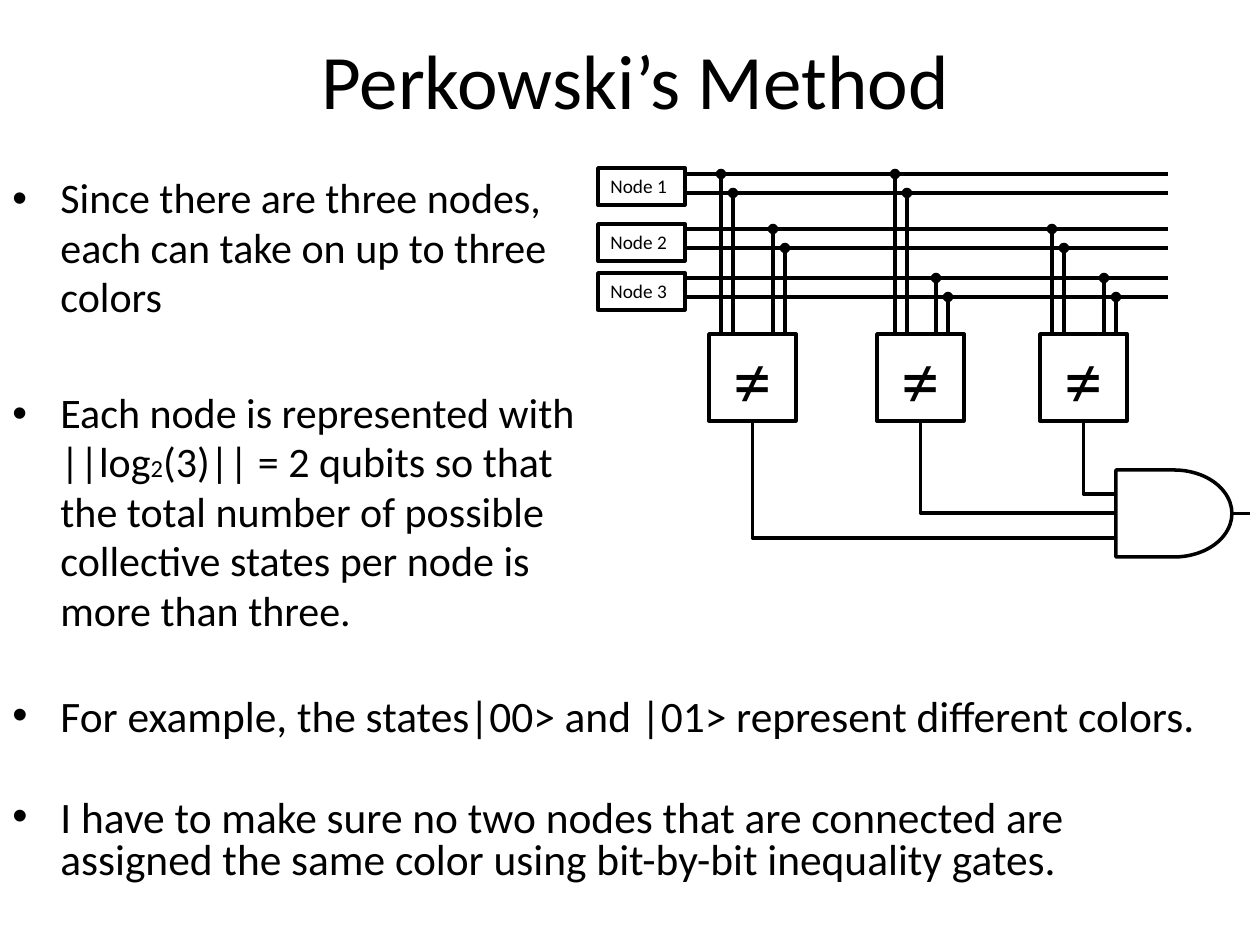
"""Build the slide on Perkowski's graph colouring method with its inequality circuit."""
from lxml.etree import SubElement
from pptx import Presentation
from pptx.dml.color import RGBColor
from pptx.enum.shapes import MSO_CONNECTOR, MSO_SHAPE
from pptx.enum.text import MSO_ANCHOR, PP_ALIGN
from pptx.oxml.ns import qn
from pptx.util import Pt

SCALE = 914400 / 126
COLORS = {"ink": "000000", "paper": "FFFFFF"}
FONT = "Calibri"
LINE_WIDTH = 2
GATE_TOP, GATE_SIZE = 334, 87
GATE_LEFTS = (709, 877, 1040)
NODE_LEFT, NODE_WIDTH, NODE_HEIGHT = 598, 87, 37
NODE_TOPS = (168, 224, 273)
QUBIT_WIRES = ((174, 193), (229, 248), (278, 297))
WIRE_START, WIRE_END = 668, 1168
TAPS = (
    (0, 721), (1, 773),
    (0, 895), (2, 936),
    (1, 1052), (2, 1104),
)
TAP_GAP = 12
AND_BOX = (1116, 470, 116, 87)
AND_INPUTS = (538, 513, 494)
OUTPUT_END = 1250
INDENT = 48
STATE_BULLETS = (
    [("Since there are three nodes, each can take on up to three colors", 24)],
    [
        ("Each node is represented with ||log", 24),
        ("2", 14),
        ("(3)|| = 2 qubits so that the total number of possible collective "
         "states per node is more than three.", 24),
    ],
)
COLOR_BULLETS = (
    [("For example, the states|00> and |01> represent different colors.", 24.8)],
    [("I have to make sure no two nodes that are connected are assigned "
      "the same color using bit-by-bit inequality gates.", 24.8)],
)


def px(length):
    """Turn px into EMU."""
    return round(length * SCALE)


def color(name):
    """Look up a named colour."""
    return RGBColor.from_string(COLORS[name])


def apply(target, **formats):
    """Set each format value on the target."""
    for attribute, value in formats.items():
        setattr(target, attribute, value)


def write(paragraph, words, size):
    """Add a run in the slide's font."""
    run = paragraph.add_run()
    run.text = words
    apply(run.font, name=FONT, size=Pt(size))
    run.font.color.rgb = color("ink")


def place(shape, left, top, width, height):
    """Set position and size in px."""
    apply(shape, left=px(left), top=px(top), width=px(width), height=px(height))


def add_title(slide, words):
    """Fill and move the title placeholder."""
    title = slide.shapes.title
    place(title, 53, 0, 1165, 158)
    title.text_frame.vertical_anchor = MSO_ANCHOR.MIDDLE
    paragraph = title.text_frame.paragraphs[0]
    paragraph.alignment = PP_ALIGN.CENTER
    write(paragraph, words, 44)


def add_bullets(slide, box, bullets, line_spacing, gap):
    """Add a text box of bulleted paragraphs."""
    frame = slide.shapes.add_textbox(*map(px, box)).text_frame
    frame.word_wrap = True
    for index, runs in enumerate(bullets):
        paragraph = frame.add_paragraph() if index else frame.paragraphs[0]
        apply(paragraph, line_spacing=line_spacing, space_before=Pt(gap if index else 5))
        properties = paragraph._p.get_or_add_pPr()
        properties.set("marL", str(px(INDENT)))
        properties.set("indent", str(-px(INDENT)))
        SubElement(properties, qn("a:buFont"), typeface="Arial")
        SubElement(properties, qn("a:buChar"), char="•")
        for words, size in runs:
            write(paragraph, words, size)


def add_block(slide, preset, box, words="", size=11, align=PP_ALIGN.LEFT, anchor=MSO_ANCHOR.TOP):
    """Add an outlined circuit block."""
    block = slide.shapes.add_shape(preset, *map(px, box))
    block.shadow.inherit = False
    block.fill.solid()
    block.fill.fore_color.rgb = color("paper")
    block.line.color.rgb = color("ink")
    block.line.width = Pt(LINE_WIDTH)
    if words:
        block.text_frame.vertical_anchor = anchor
        paragraph = block.text_frame.paragraphs[0]
        paragraph.alignment = align
        write(paragraph, words, size)
    return block


def add_wire(slide, start, end, kind=MSO_CONNECTOR.STRAIGHT, dotted=False):
    """Add a wire, with a dot at its start if dotted."""
    wire = slide.shapes.add_connector(kind, *map(px, start + end))
    wire.line.color.rgb = color("ink")
    wire.line.width = Pt(LINE_WIDTH)
    if dotted:
        SubElement(wire.line._get_or_add_ln(), qn("a:headEnd"), type="oval")
    SubElement(wire._element.spPr, qn("a:effectLst"))
    return wire


def add_elbow(slide, gate, and_gate, start, end):
    """Add a wire that runs down from a gate and then right."""
    wire = add_wire(slide, start, end, MSO_CONNECTOR.ELBOW)
    wire.begin_connect(gate, 2)
    if end[1] == AND_INPUTS[1]:
        wire.end_connect(and_gate, 1)
    across, down = end[0] - start[0], end[1] - start[1]
    middle_x, middle_y = (start[0] + end[0]) / 2, (start[1] + end[1]) / 2
    place(wire, middle_x - down / 2, middle_y - across / 2, down, across)
    properties = wire._element.spPr
    properties.find(qn("a:prstGeom")).set("prst", "bentConnector2")
    transform = properties.find(qn("a:xfrm"))
    transform.set("rot", "16200000")
    transform.set("flipH", "1")


def add_circuit(slide):
    """Draw nodes, qubit wires, inequality gates and the AND gate."""
    for pair in QUBIT_WIRES:
        for level in pair:
            add_wire(slide, (WIRE_START, level), (WIRE_END, level))
    for number, top in enumerate(NODE_TOPS, 1):
        add_block(slide, MSO_SHAPE.RECTANGLE, (NODE_LEFT, top, NODE_WIDTH, NODE_HEIGHT),
                  f"Node {number}")
    for node, left in TAPS:
        for qubit, level in enumerate(QUBIT_WIRES[node]):
            tap = left + qubit * TAP_GAP
            add_wire(slide, (tap, level), (tap, GATE_TOP), dotted=True)
    and_gate = add_block(slide, MSO_SHAPE.FLOWCHART_DELAY, AND_BOX)
    for left, level in zip(GATE_LEFTS, AND_INPUTS):
        gate = add_block(slide, MSO_SHAPE.RECTANGLE, (left, GATE_TOP, GATE_SIZE, GATE_SIZE),
                         "≠", 44, PP_ALIGN.CENTER, MSO_ANCHOR.MIDDLE)
        add_elbow(slide, gate, and_gate,
                  (left + GATE_SIZE / 2, GATE_TOP + GATE_SIZE), (AND_BOX[0], level))
    level = AND_BOX[1] + AND_BOX[3] / 2
    output = add_wire(slide, (AND_BOX[0] + AND_BOX[2], level), (OUTPUT_END, level))
    output.begin_connect(and_gate, 3)


def main():
    """Build and save the slide."""
    deck = Presentation()
    apply(deck, slide_width=px(1260), slide_height=px(945))
    slide = deck.slides.add_slide(deck.slide_layouts[5])
    add_title(slide, "Perkowski’s Method")
    add_bullets(slide, (0, 168, 598, 483), STATE_BULLETS, 0.98, 38)
    add_circuit(slide)
    add_bullets(slide, (0, 693, 1228, 252), COLOR_BULLETS, 0.8, 34)
    deck.save("out.pptx")


if __name__ == "__main__":
    main()
